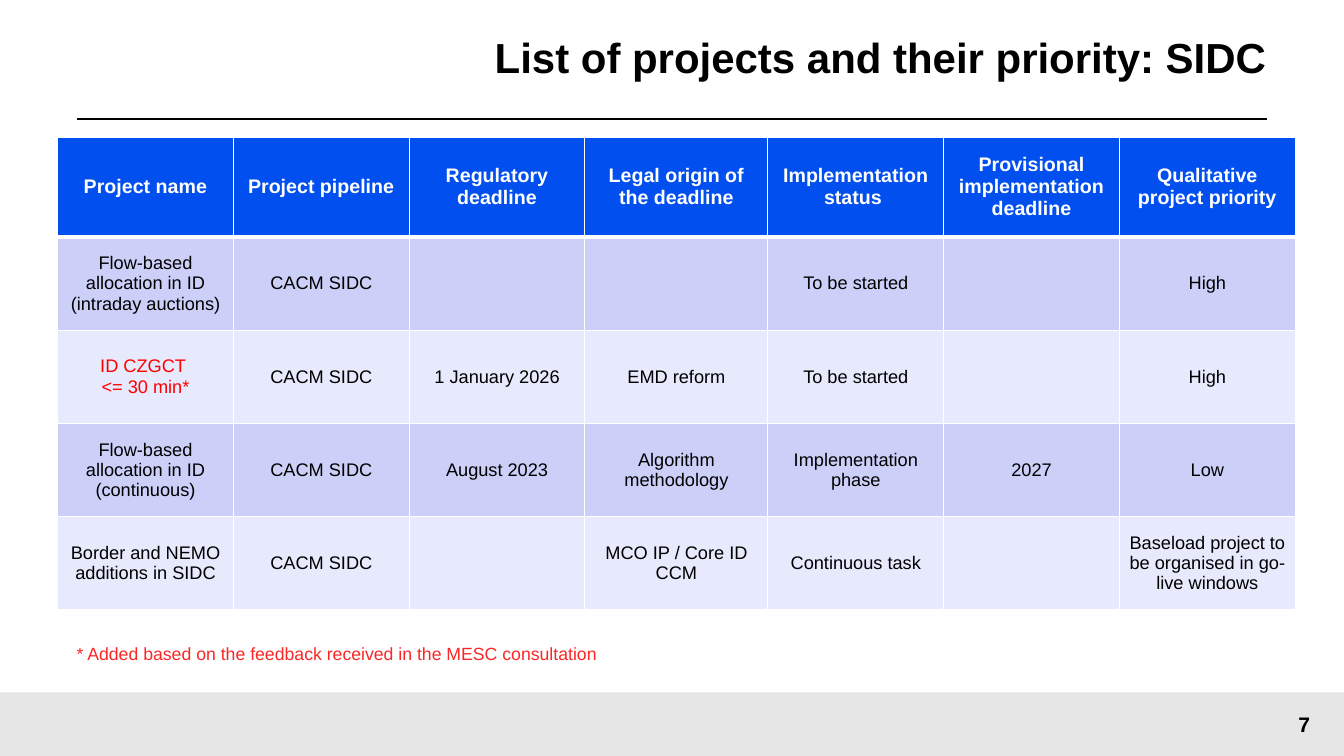
from dataclasses import dataclass

from lxml import etree
from pptx import Presentation
from pptx.dml.color import RGBColor
from pptx.enum.shapes import MSO_CONNECTOR, MSO_SHAPE
from pptx.enum.text import MSO_ANCHOR, PP_ALIGN
from pptx.oxml.ns import qn
from pptx.slide import Slide
from pptx.table import _Cell
from pptx.text.text import TextFrame
from pptx.util import Cm, Pt

LEFT, CENTER, RIGHT = PP_ALIGN.LEFT, PP_ALIGN.CENTER, PP_ALIGN.RIGHT
TOP, MIDDLE = MSO_ANCHOR.TOP, MSO_ANCHOR.MIDDLE
RECTANGLE, STRAIGHT = MSO_SHAPE.RECTANGLE, MSO_CONNECTOR.STRAIGHT

BLACK = RGBColor(0x00, 0x00, 0x00)
WHITE = RGBColor(0xFF, 0xFF, 0xFF)
RED = RGBColor(0xFF, 0x00, 0x00)
NOTE_RED = RGBColor(0xFA, 0x27, 0x27)
HEADER_BLUE = RGBColor(0x00, 0x4F, 0xEE)
BAND_DARK = RGBColor(0xCC, 0xD0, 0xF8)
BAND_LIGHT = RGBColor(0xE7, 0xE9, 0xFC)
FOOTER_GREY = RGBColor(0xE6, 0xE6, 0xE6)

SLIDE_WIDTH, SLIDE_HEIGHT = Cm(33.87), Cm(19.05)
FOOTER_TOP, FOOTER_HEIGHT = Cm(17.45), Cm(1.6)
COLUMN_WIDTHS = [4.43, 4.43, 4.43, 4.61, 4.43, 4.43, 4.43]
HEADER_HEIGHT, ROW_HEIGHT = 2.51, 2.35
THIN, THICK = 1, 3

HEADERS = [
    "Project name", "Project pipeline", "Regulatory deadline", "Legal origin of the deadline",
    "Implementation status ", "Provisional implementation deadline", "Qualitative project priority",
]


@dataclass(frozen=True)
class Project:
    """One row of the project table."""
    name: str
    regulatory_deadline: str
    legal_origin: str
    status: str
    provisional_deadline: str
    priority: str
    name_color: RGBColor = BLACK
    pipeline: str = "CACM SIDC"

    def values(self) -> list[str]:
        """Return the cell texts in column order."""
        return [self.name, self.pipeline, self.regulatory_deadline, self.legal_origin,
                self.status, self.provisional_deadline, self.priority]


PROJECTS = [
    Project("Flow-based allocation in ID (intraday auctions)", "", "", "To be started", "", "High"),
    Project("ID CZGCT \n<= 30 min*", "1 January 2026", "EMD reform", "To be started", "", "High",
            name_color=RED),
    Project("Flow-based allocation in ID (continuous)", "August 2023", "Algorithm methodology",
            "Implementation phase", "2027", "Low"),
    Project("Border and NEMO additions in SIDC", "", "MCO IP / Core ID CCM", "Continuous task", "",
            "Baseload project to be organised in go-live windows"),
]


def write_text(frame: TextFrame, text: str, *, size: float, color: RGBColor = BLACK,
               bold: bool = False, align: PP_ALIGN = CENTER, spacing: float = 1.0) -> None:
    """Fill a text frame with formatted paragraphs, one for each line."""
    frame.word_wrap = True
    frame.text = text
    for paragraph in frame.paragraphs:
        paragraph.alignment = align
        paragraph.line_spacing = spacing
        for run in paragraph.runs:
            font = run.font
            font.name, font.size, font.bold = "Arial", Pt(size), bold
            font.color.rgb = color


def add_text_box(slide: Slide, box: tuple[int, int, int, int], text: str, *,
                 anchor: MSO_ANCHOR = TOP, **text_format) -> None:
    """Add a text box with formatted text."""
    frame = slide.shapes.add_textbox(*box).text_frame
    frame.vertical_anchor = anchor
    write_text(frame, text, **text_format)


def set_borders(cell: _Cell, top: float, bottom: float) -> None:
    """Draw white borders around a cell, given the top and bottom widths in points."""
    properties = cell._tc.get_or_add_tcPr()
    for side, width in (("L", THIN), ("R", THIN), ("T", top), ("B", bottom)):
        line = etree.SubElement(properties, qn(f"a:ln{side}"), w=str(Pt(width)))
        fill = etree.SubElement(line, qn("a:solidFill"))
        etree.SubElement(fill, qn("a:srgbClr"), val=str(WHITE))


def add_background(slide: Slide) -> None:
    """Add the footer band and the rule below the title."""
    band = slide.shapes.add_shape(RECTANGLE, 0, FOOTER_TOP, SLIDE_WIDTH, FOOTER_HEIGHT)
    band.shadow.inherit = False
    band.fill.solid()
    band.fill.fore_color.rgb = FOOTER_GREY
    band.line.fill.background()
    rule = slide.shapes.add_connector(STRAIGHT, Cm(1.93), Cm(3), Cm(31.93), Cm(3))
    rule.line.color.rgb = BLACK
    rule.line.width = Pt(1.5)
    etree.SubElement(rule._element.spPr, qn("a:effectLst"))


def set_title(slide: Slide, text: str) -> None:
    """Place and format the slide title."""
    title = slide.shapes.title
    title.left, title.top, title.width, title.height = Cm(7.72), 0, Cm(24.21), Cm(3)
    frame = title.text_frame
    frame.margin_left = frame.margin_right = 0
    frame.margin_top = frame.margin_bottom = Cm(0.5)
    frame.vertical_anchor = MIDDLE
    write_text(frame, text, size=30, bold=True, align=RIGHT, spacing=0.9)


def add_project_table(slide: Slide) -> None:
    """Add the table of projects below the title."""
    heights = [HEADER_HEIGHT] + [ROW_HEIGHT] * len(PROJECTS)
    table = slide.shapes.add_table(len(heights), len(HEADERS), Cm(1.45), Cm(3.46),
                                   Cm(sum(COLUMN_WIDTHS)), Cm(sum(heights))).table
    for column, width in zip(table.columns, COLUMN_WIDTHS):
        column.width = Cm(width)
    for row, height in zip(table.rows, heights):
        row.height = Cm(height)
    for row_index, texts in enumerate([HEADERS] + [project.values() for project in PROJECTS]):
        is_header = row_index == 0
        band = BAND_DARK if row_index % 2 else BAND_LIGHT
        for column_index, text in enumerate(texts):
            cell = table.cell(row_index, column_index)
            cell.vertical_anchor = MIDDLE
            set_borders(cell, top=THICK if row_index == 1 else THIN,
                        bottom=THICK if is_header else THIN)
            cell.fill.solid()
            cell.fill.fore_color.rgb = HEADER_BLUE if is_header else band
            if is_header:
                color = WHITE
            else:
                color = PROJECTS[row_index - 1].name_color if column_index == 0 else BLACK
            write_text(cell.text_frame, text, size=14 if is_header else 13,
                       color=color, bold=is_header)


def main() -> None:
    """Build the slide and save the presentation."""
    presentation = Presentation()
    presentation.slide_width, presentation.slide_height = SLIDE_WIDTH, SLIDE_HEIGHT
    slide = presentation.slides.add_slide(presentation.slide_layouts[5])
    add_background(slide)
    set_title(slide, "List of projects and their priority: SIDC")
    add_text_box(slide, (Cm(31.87), FOOTER_TOP, Cm(2), FOOTER_HEIGHT), "7",
                 anchor=MIDDLE, size=15, bold=True)
    add_project_table(slide)
    add_text_box(slide, (Cm(1.68), Cm(16.08), Cm(28.58), Cm(0.71)),
                 "* Added based on the feedback received in the MESC consultation",
                 size=12.6, color=NOTE_RED, align=LEFT)
    presentation.save("out.pptx")


if __name__ == "__main__":
    main()
